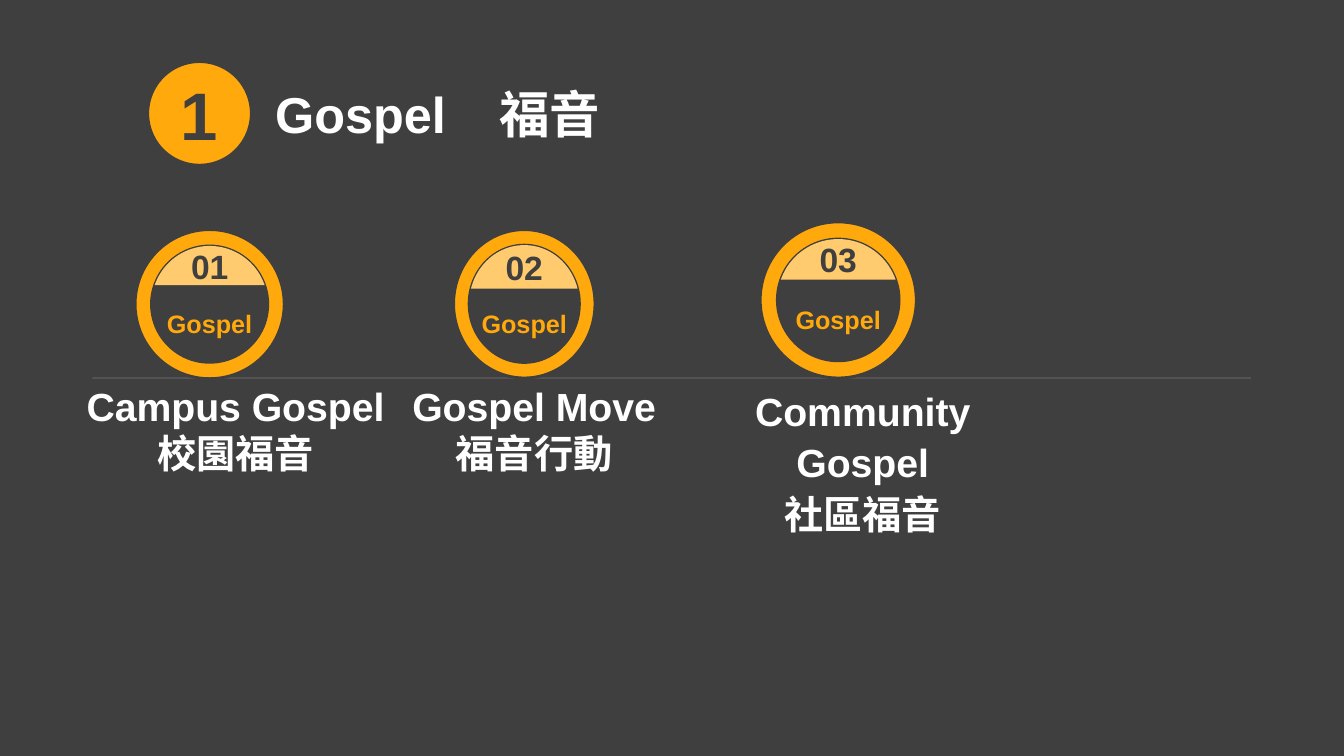
import math

import pptx
import pptx.dml.color
import pptx.enum.shapes
import pptx.enum.text
import pptx.oxml
import pptx.oxml.ns
import pptx.util

Pt = pptx.util.Pt
SHAPE = pptx.enum.shapes.MSO_SHAPE
ANCHOR = pptx.enum.text.MSO_ANCHOR
ALIGN = pptx.enum.text.PP_ALIGN
COLORS = {"ground": "3F3F3F", "orange": "FFA90D", "cream": "FFCB6E", "white": "FFFFFF"}
LATIN_FONT = "Arial"
CJK_FONT = "Noto Sans CJK SC"
RING_RATIO = 0.11  # ring thickness against ring width
NO_INSETS = (0, 0, 0, 0)
TEXT_INSETS = (7.2, 3.6, 7.2, 3.6)


def rgb(name):
    return pptx.dml.color.RGBColor.from_string(COLORS[name])


def add_child(parent, tag, **attributes):
    child = pptx.oxml.parse_xml(f"<a:{tag} {pptx.oxml.ns.nsdecls('a')}/>")
    for key, value in attributes.items():
        child.set(key, str(value))
    parent.append(child)
    return child


def write(shape, text, size=28, color="white", align=ALIGN.CENTER, anchor=ANCHOR.MIDDLE,
          insets=NO_INSETS, spacing=None, wrap=True, tab=None):
    """Fill a shape with bold text, one paragraph per line of text."""
    frame = shape.text_frame
    frame.word_wrap = wrap
    frame.vertical_anchor = anchor
    frame.margin_left, frame.margin_top, frame.margin_right, frame.margin_bottom = map(Pt, insets)
    for index, line in enumerate(text.split("\n")):
        paragraph = frame.add_paragraph() if index else frame.paragraphs[0]
        paragraph.alignment = align
        if spacing:
            paragraph.line_spacing = spacing
        if tab:
            tabs = add_child(paragraph._p.get_or_add_pPr(), "tabLst")
            add_child(tabs, "tab", pos=Pt(tab), algn="l")
        run = paragraph.add_run()
        run.text = line
        run.font.size = Pt(size)
        run.font.bold = True
        run.font.color.rgb = rgb(color)
        run.font.name = LATIN_FONT
        add_child(run._r.get_or_add_rPr(), "ea", typeface=CJK_FONT)


def paint(shape, fill, outlined=True):
    shape.shadow.inherit = False
    shape.fill.solid()
    shape.fill.fore_color.rgb = rgb(fill)
    if outlined:
        shape.line.color.rgb = rgb("ground")
        shape.line.width = Pt(2)
    else:
        shape.line.fill.background()


def add_preset(slide, preset, left, top, width, height, fill):
    shape = slide.shapes.add_shape(preset, Pt(left), Pt(top), Pt(width), Pt(height))
    paint(shape, fill)
    return shape


def add_label(slide, text, left, top, width, height, **text_format):
    box = slide.shapes.add_textbox(Pt(left), Pt(top), Pt(width), Pt(height))
    write(box, text, insets=TEXT_INSETS, **text_format)


def add_baseline(slide, left, right, y):
    line = slide.shapes.add_connector(
        pptx.enum.shapes.MSO_CONNECTOR.STRAIGHT, Pt(left), Pt(y), Pt(right), Pt(y))
    line.line.color.rgb = rgb("white")
    line.line.width = Pt(0.5)
    white = line._element.spPr.find(".//" + pptx.oxml.ns.qn("a:srgbClr"))
    add_child(white, "alpha", val=30000)
    add_child(line._element.spPr, "effectLst")


def add_cap(slide, number, center_x, top, radius_x, radius_y, depth):
    """Cut the top of an ellipse at the given depth and number it."""
    half_angle = math.acos(1 - depth / radius_y)
    steps = 48
    angles = [half_angle * (2 * step / steps - 1) for step in range(steps + 1)]
    arc = [(Pt(center_x + radius_x * math.sin(angle)),
            Pt(top + radius_y * (1 - math.cos(angle)))) for angle in angles]
    builder = slide.shapes.build_freeform(*arc[0])
    builder.add_line_segments(arc[1:], close=True)
    cap = builder.convert_to_shape()
    paint(cap, "cream", outlined=False)
    write(cap, number, size=24, color="ground")


def add_badge(slide, number, left, top, width, height, cap_depth):
    ring = add_preset(slide, SHAPE.DONUT, left, top, width, height, "orange")
    ring.adjustments[0] = RING_RATIO
    write(ring, "Gospel", size=18, color="orange", insets=(0, 28, 0, 0))
    thickness = RING_RATIO * width
    add_cap(slide, number, left + width / 2, top + thickness,
            width / 2 - thickness, height / 2 - thickness, cap_depth)


def main():
    deck = pptx.Presentation()
    deck.slide_width, deck.slide_height = Pt(960), Pt(540)
    slide = deck.slides.add_slide(deck.slide_layouts[6])
    slide.background.fill.solid()
    slide.background.fill.fore_color.rgb = rgb("ground")

    add_baseline(slide, 66, 893.5, 270)
    section = add_preset(slide, SHAPE.OVAL, 105.5, 44, 74, 74, "orange")
    write(section, "1", size=48, color="ground")
    add_label(slide, "Gospel\t福音", 189.5, 44.5, 398, 62.5, size=36, align=ALIGN.LEFT,
              anchor=ANCHOR.BOTTOM, spacing=0.9, tab=160)

    for badge in (("01", 96.5, 164, 106.5, 106.5, 28),
                  ("02", 324, 164, 101, 106, 31),
                  ("03", 543, 158.5, 111.5, 111.5, 29)):
        add_badge(slide, *badge)

    add_label(slide, "Campus Gospel\n校園福音", 53.5, 269.5, 229.5, 75,
              anchor=ANCHOR.TOP, wrap=False)
    add_label(slide, "Gospel Move\n福音行動", 281.5, 269.5, 200, 75, anchor=ANCHOR.TOP)
    add_label(slide, "Community Gospel\n社區福音", 487.5, 269.5, 257.5, 116,
              anchor=ANCHOR.TOP, spacing=1.1)
    deck.save("out.pptx")


if __name__ == "__main__":
    main()
